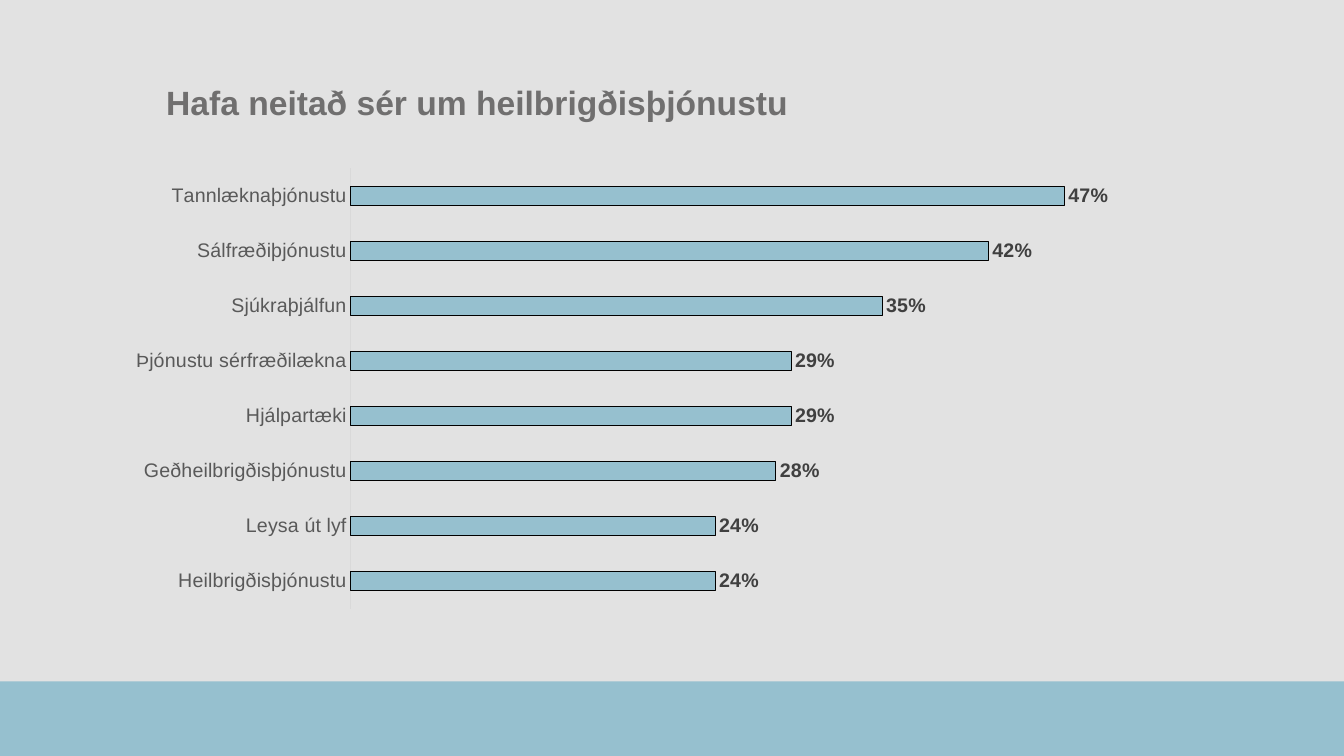
from lxml import etree
from pptx import Presentation
from pptx.chart.data import CategoryChartData
from pptx.dml.color import RGBColor
from pptx.enum.chart import XL_CHART_TYPE, XL_LABEL_POSITION, XL_TICK_LABEL_POSITION, XL_TICK_MARK
from pptx.enum.shapes import MSO_SHAPE
from pptx.enum.text import MSO_ANCHOR
from pptx.oxml.ns import qn
from pptx.util import Inches, Pt

BAR = XL_CHART_TYPE.BAR_CLUSTERED
OUTSIDE = XL_LABEL_POSITION.OUTSIDE_END
NEXT_TO_AXIS = XL_TICK_LABEL_POSITION.NEXT_TO_AXIS
NO_TICK = XL_TICK_MARK.NONE
RECT = MSO_SHAPE.RECTANGLE
MIDDLE = MSO_ANCHOR.MIDDLE

TITLE = "Hafa neitað sér um heilbrigðisþjónustu"
REFUSED = [
    ("Heilbrigðisþjónustu", 0.24),
    ("Leysa út lyf", 0.24),
    ("Geðheilbrigðisþjónustu", 0.28),
    ("Hjálpartæki", 0.29),
    ("Þjónustu sérfræðilækna", 0.29),
    ("Sjúkraþjálfun", 0.35),
    ("Sálfræðiþjónustu", 0.42),
    ("Tannlæknaþjónustu", 0.47),
]
WIDTH, HEIGHT = 13.33, 7.5
BAND_TOP = 6.76
TITLE_BOX = (1.55, 0.7, 10.24, 0.68)
CHART_BOX = (1.17, 1.58, 10.04, 4.55)
PLOT = {"x": 0.23, "y": 0.02, "w": 0.75, "h": 0.96}
BLUE = "96C0CF"
FORMATS = {
    "title": {"size": 24, "bold": True, "color": "706F6F"},
    "chart": {"size": 10, "bold": False, "color": "000000"},
    "category": {"size": 14, "bold": False, "color": "595959"},
    "value": {"size": 14, "bold": True, "color": "404040"},
}


def rgb(value):
    return RGBColor.from_string(value)


def box(left, top, width, height):
    return [Inches(v) for v in (left, top, width, height)]


def style(font, name):
    fmt = FORMATS[name]
    font.color.rgb = rgb(fmt["color"])
    for key, value in {"name": "Arial", "size": Pt(fmt["size"]), "bold": fmt["bold"]}.items():
        setattr(font, key, value)


def fill(fmt, color):
    fmt.fill.solid()
    fmt.fill.fore_color.rgb = rgb(color)


def outline(fmt, color):
    fmt.line.color.rgb = rgb(color)
    fmt.line.width = Pt(0.75)


def place_plot(chart):
    area = chart.element.find(".//" + qn("c:plotArea"))
    for old in area.findall(qn("c:layout")):
        area.remove(old)
    layout = etree.Element(qn("c:layout"))
    manual = etree.SubElement(layout, qn("c:manualLayout"))
    settings = {"layoutTarget": "inner", "xMode": "edge", "yMode": "edge", **PLOT}
    for tag, value in settings.items():
        etree.SubElement(manual, qn("c:" + tag)).set("val", str(value))
    area.insert(0, layout)


def add_title(slide):
    tf = slide.shapes.add_textbox(*box(*TITLE_BOX)).text_frame
    tf.word_wrap = True
    tf.vertical_anchor = MIDDLE
    p = tf.paragraphs[0]
    p.line_spacing = 0.9
    r = p.add_run()
    r.text = TITLE
    style(r.font, "title")


def add_bars(slide):
    data = CategoryChartData(number_format="0%")
    names, shares = zip(*REFUSED)
    data.categories = names
    data.add_series("Series 1", shares)
    chart = slide.shapes.add_chart(BAR, *box(*CHART_BOX), data).chart
    chart.has_legend = chart.has_title = False
    style(chart.font, "chart")
    place_plot(chart)

    axis = chart.category_axis
    axis.major_tick_mark = axis.minor_tick_mark = NO_TICK
    axis.tick_label_position = NEXT_TO_AXIS
    style(axis.tick_labels.font, "category")
    outline(axis.format, "D9D9D9")

    scale = chart.value_axis
    scale.minimum_scale, scale.maximum_scale = 0, 0.5
    scale.has_major_gridlines = False
    scale.visible = False

    plot = chart.plots[0]
    plot.gap_width = 182
    plot.vary_by_categories = False
    series = plot.series[0]
    fill(series.format, BLUE)
    outline(series.format, "000000")
    labels = series.data_labels
    formats = {"show_value": True, "number_format": "0%",
               "number_format_is_linked": False, "position": OUTSIDE}
    for key, value in formats.items():
        setattr(labels, key, value)
    style(labels.font, "value")


def main():
    prs = Presentation()
    prs.slide_width, prs.slide_height = Inches(WIDTH), Inches(HEIGHT)
    slide = prs.slides.add_slide(prs.slide_layouts[6])
    fill(slide.background, "E2E2E2")
    band = slide.shapes.add_shape(RECT, *box(0, BAND_TOP, WIDTH, HEIGHT - BAND_TOP))
    band.shadow.inherit = False
    fill(band, BLUE)
    band.line.fill.background()
    add_title(slide)
    add_bars(slide)
    prs.save("out.pptx")


if __name__ == "__main__":
    main()
